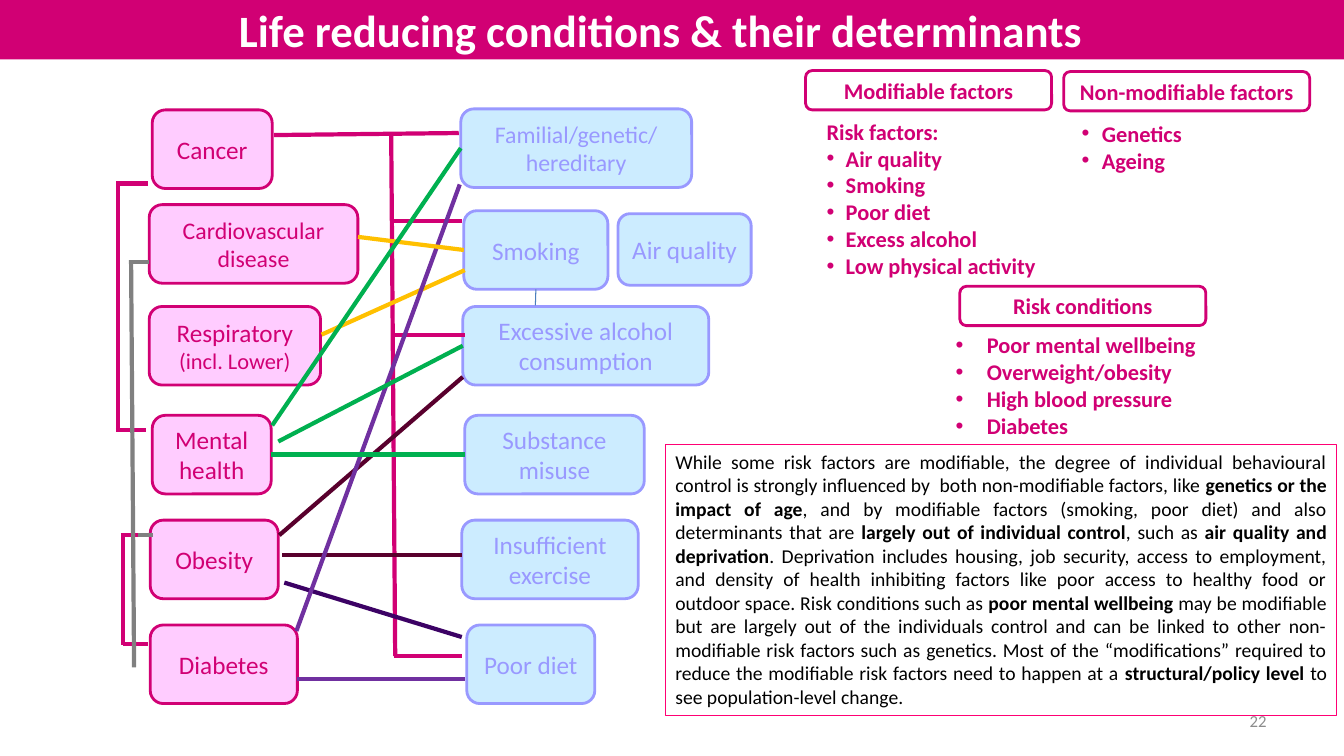
from lxml.etree import SubElement
from pptx import Presentation
from pptx.dml.color import RGBColor
from pptx.enum.shapes import MSO_CONNECTOR, MSO_SHAPE
from pptx.enum.text import MSO_ANCHOR, PP_ALIGN
from pptx.oxml.ns import qn
from pptx.util import Inches, Pt

MAGENTA = RGBColor(0xD1, 0x00, 0x74)
HOT_PINK = RGBColor(0xFF, 0x00, 0x74)
PINK = RGBColor(0xFF, 0xCC, 0xFF)
PALE_BLUE = RGBColor(0xCC, 0xEC, 0xFF)
LAVENDER = RGBColor(0x99, 0x99, 0xFF)
AMBER = RGBColor(0xFF, 0xC0, 0x00)
GREEN = RGBColor(0x00, 0xB0, 0x50)
PURPLE = RGBColor(0x70, 0x30, 0xA0)
INDIGO = RGBColor(0x3C, 0x02, 0x65)
MAROON = RGBColor(0x59, 0x00, 0x2D)
STEEL = RGBColor(0x4B, 0x7E, 0xBC)
GREY = RGBColor(0x80, 0x80, 0x80)
LIGHT_GREY = RGBColor(0x8C, 0x8C, 0x8C)
WHITE = RGBColor(0xFF, 0xFF, 0xFF)
BLACK = RGBColor(0x00, 0x00, 0x00)

TOP, LEFT, BOTTOM, RIGHT = range(4)
BOX_HEIGHT = 0.78

CONDITIONS = [
    ("Cancer", 1.51, 1.09, 1.19, 18),
    ("Cardiovascular disease", 1.48, 2.03, 2.07, 17),
    ("Respiratory ", 1.48, 3.04, 1.7, 18),
    ("Mental health", 1.51, 4.12, 1.18, 18),
    ("Obesity", 1.49, 5.16, 1.27, 18),
    ("Diabetes", 1.49, 6.2, 1.46, 18),
]
DETERMINANTS = [
    ("Familial/genetic/\nhereditary", 4.57, 1.08, 2.29, 17),
    ("Smoking", 4.6, 2.09, 1.43, 18),
    ("Excessive alcohol consumption", 4.59, 3.04, 2.44, 18),
    ("Substance misuse", 4.61, 4.12, 1.78, 18),
    ("Insufficient exercise", 4.58, 5.16, 1.75, 18),
    ("Poor diet", 4.63, 6.2, 1.27, 18),
]
LINKS = [
    (MAGENTA, [(2.72, 1.34, 4.55, 1.32), (3.88, 1.34, 3.92, 6.51),
               (3.89, 2.19, 4.58, 2.19), (3.89, 3.32, 4.61, 3.32),
               (3.91, 6.51, 4.58, 6.51),
               (1.17, 1.8, 1.17, 4.27), (1.17, 1.82, 1.47, 1.82),
               (1.15, 4.27, 1.45, 4.27), (1.22, 5.29, 1.22, 6.4),
               (1.2, 5.31, 1.45, 5.31), (1.22, 6.39, 1.47, 6.39)]),
    (AMBER, [(3.19, 3.32, 4.61, 2.68)]),
    (MAROON, [(2.8, 5.51, 4.58, 5.51), (2.77, 5.31, 4.59, 3.74)]),
    (INDIGO, [(2.82, 5.78, 4.58, 6.32)]),
    (PURPLE, [(2.95, 6.74, 4.61, 6.74), (2.94, 6.26, 4.56, 1.83)]),
    (GREY, [(1.3, 2.58, 1.33, 6.62), (1.32, 2.6, 1.48, 2.6), (1.37, 5.31, 1.52, 5.31)]),
]
HEADINGS = [
    ("Modifiable factors", 7.99, 0.7),
    ("Non-modifiable factors", 10.55, 0.71),
    ("Risk conditions", 9.52, 2.84),
]
FACTOR_LISTS = [
    (["Risk factors:", "Air quality", "Smoking", "Poor diet", "Excess alcohol",
      "Low physical activity"], (8.1, 1.12, 2.57, 1.99), 0.19),
    (["Genetics", "Ageing"], (10.63, 1.14, 2.18, 0.64), 0.2),
    (["Poor mental wellbeing", "Overweight/obesity", "High blood pressure", "Diabetes"],
     (9.38, 3.24, 2.8, 1.18), 0.31),
]
EXPLANATION = [
    ("While some risk factors are modifiable, the degree of individual behavioural control "
     "is strongly influenced by  both non-modifiable factors, like ", False),
    ("genetics or the impact of age", True),
    (", and by modifiable factors (smoking, poor diet) and also determinants that are ", False),
    ("largely out of individual control", True),
    (", such as ", False),
    ("air quality and deprivation", True),
    (". Deprivation includes housing, job security, access to employment, and density of "
     "health inhibiting factors like poor access to healthy food or outdoor space. Risk "
     "conditions such as ", False),
    ("poor mental wellbeing ", True),
    ("may be modifiable but are largely out of the individuals control and can be linked to "
     "other non-modifiable risk factors such as genetics. Most of the “modifications” required "
     "to reduce the modifiable risk factors need to happen at a ", False),
    ("structural/policy level ", True),
    ("to see population-level change.", False),
]


def style_run(run, size, color, bold=False):
    """Give a run its font, size, colour and weight."""
    run.font.name = "Calibri"
    run.font.size = Pt(size)
    run.font.color.rgb = color
    run.font.bold = bold


def style_text(frame, size, color, bold=False, align=PP_ALIGN.CENTER):
    """Format every paragraph and run of a text frame."""
    frame.word_wrap = True
    for paragraph in frame.paragraphs:
        paragraph.alignment = align
        for run in paragraph.runs:
            style_run(run, size, color, bold)


def add_box(slide, text, area, size, color, fill=None, line=None, bold=False,
            preset=MSO_SHAPE.ROUNDED_RECTANGLE, weight=2):
    """Add a filled or outlined box with centred text."""
    box = slide.shapes.add_shape(preset, *map(Inches, area))
    box.shadow.inherit = False
    if fill is None:
        box.fill.background()
    else:
        box.fill.solid()
        box.fill.fore_color.rgb = fill
    if line is None:
        box.line.fill.background()
    else:
        box.line.color.rgb = line
        box.line.width = Pt(weight)
    frame = box.text_frame
    frame.vertical_anchor = MSO_ANCHOR.MIDDLE
    frame.margin_left = frame.margin_right = Inches(0.08)
    frame.text = text
    style_text(frame, size, color, bold)
    return box


def add_link(slide, ends, color, weight=3):
    """Add a straight line between two points."""
    link = slide.shapes.add_connector(MSO_CONNECTOR.STRAIGHT, *map(Inches, ends))
    link.line.color.rgb = color
    link.line.width = Pt(weight)
    SubElement(link._element.spPr, qn("a:effectLst"))
    return link


def add_factor_list(slide, items, area, indent):
    """Add a bold list whose items are bulleted unless they end in a colon."""
    frame = slide.shapes.add_textbox(*map(Inches, area)).text_frame
    frame.text = "\n".join(items)
    style_text(frame, 16, MAGENTA, True, PP_ALIGN.LEFT)
    for paragraph in frame.paragraphs:
        if not paragraph.text.endswith(":"):
            properties = paragraph._p.get_or_add_pPr()
            properties.set("marL", str(Inches(indent)))
            properties.set("indent", str(-Inches(indent)))
            SubElement(properties, qn("a:buFont"), typeface="Arial")
            SubElement(properties, qn("a:buChar"), char="•")


def add_explanation(slide):
    """Add the outlined, justified paragraph with bold phrases."""
    panel = add_box(slide, "", (6.6, 4.41, 6.66, 2.69), 14, BLACK, line=HOT_PINK,
                    preset=MSO_SHAPE.RECTANGLE, weight=0.75)
    frame = panel.text_frame
    frame.vertical_anchor = MSO_ANCHOR.TOP
    frame.margin_left = frame.margin_right = Inches(0.1)
    paragraph = frame.paragraphs[0]
    paragraph.alignment = PP_ALIGN.JUSTIFY
    for phrase, bold in EXPLANATION:
        run = paragraph.add_run()
        run.text = phrase
        style_run(run, 14, BLACK, bold)


def add_page_number(slide):
    """Add the slide number at the lower right."""
    frame = slide.shapes.add_textbox(*map(Inches, (9.55, 6.95, 3.11, 0.4))).text_frame
    frame.vertical_anchor = MSO_ANCHOR.MIDDLE
    frame.text = "22"
    style_text(frame, 12, LIGHT_GREY, align=PP_ALIGN.RIGHT)


def main():
    """Build the slide and save it."""
    deck = Presentation()
    deck.slide_width, deck.slide_height = Inches(13.33), Inches(7.5)
    slide = deck.slides.add_slide(deck.slide_layouts[6])

    banner = add_box(slide, "Life reducing conditions & their determinants", (0, 0, 13.33, 0.59),
                     32, WHITE, MAGENTA, bold=True, preset=MSO_SHAPE.RECTANGLE)
    banner.text_frame.margin_right = Inches(0.3)

    boxes = {}
    for group, fill, color in ((CONDITIONS, PINK, MAGENTA), (DETERMINANTS, PALE_BLUE, LAVENDER)):
        for text, left, top, width, size in group:
            boxes[text.split()[0]] = add_box(slide, text, (left, top, width, BOX_HEIGHT),
                                             size, color, fill, color)
    lower = boxes["Respiratory"].text_frame.paragraphs[0].add_run()
    lower.text = "(incl. Lower)"
    style_run(lower, 16, MAGENTA)
    add_box(slide, "Air quality", (6.13, 2.12, 1.32, 0.71), 18, LAVENDER, PALE_BLUE, LAVENDER)

    for color, lines in LINKS:
        for ends in lines:
            add_link(slide, ends, color)
    for ends, color, determinant in (((3.55, 2.35, 4.6, 2.48), AMBER, "Smoking"),
                                     ((2.76, 4.38, 4.59, 3.43), GREEN, "Excessive"),
                                     ((2.7, 4.22, 4.57, 1.47), GREEN, "Familial/genetic/")):
        add_link(slide, ends, color).end_connect(boxes[determinant], LEFT)
    substance_link = add_link(slide, (2.69, 4.51, 4.61, 4.51), GREEN)
    substance_link.begin_connect(boxes["Mental"], RIGHT)
    substance_link.end_connect(boxes["Substance"], LEFT)
    alcohol_link = add_link(slide, (5.31, 2.87, 5.31, 3.03), STEEL, 0.75)
    alcohol_link.begin_connect(boxes["Smoking"], BOTTOM)

    add_explanation(slide)
    for text, left, top in HEADINGS:
        add_box(slide, text, (left, top, 2.44, 0.39), 16, MAGENTA, WHITE, MAGENTA, True)
    for items, area, indent in FACTOR_LISTS:
        add_factor_list(slide, items, area, indent)
    add_page_number(slide)
    deck.save("out.pptx")


if __name__ == "__main__":
    main()
